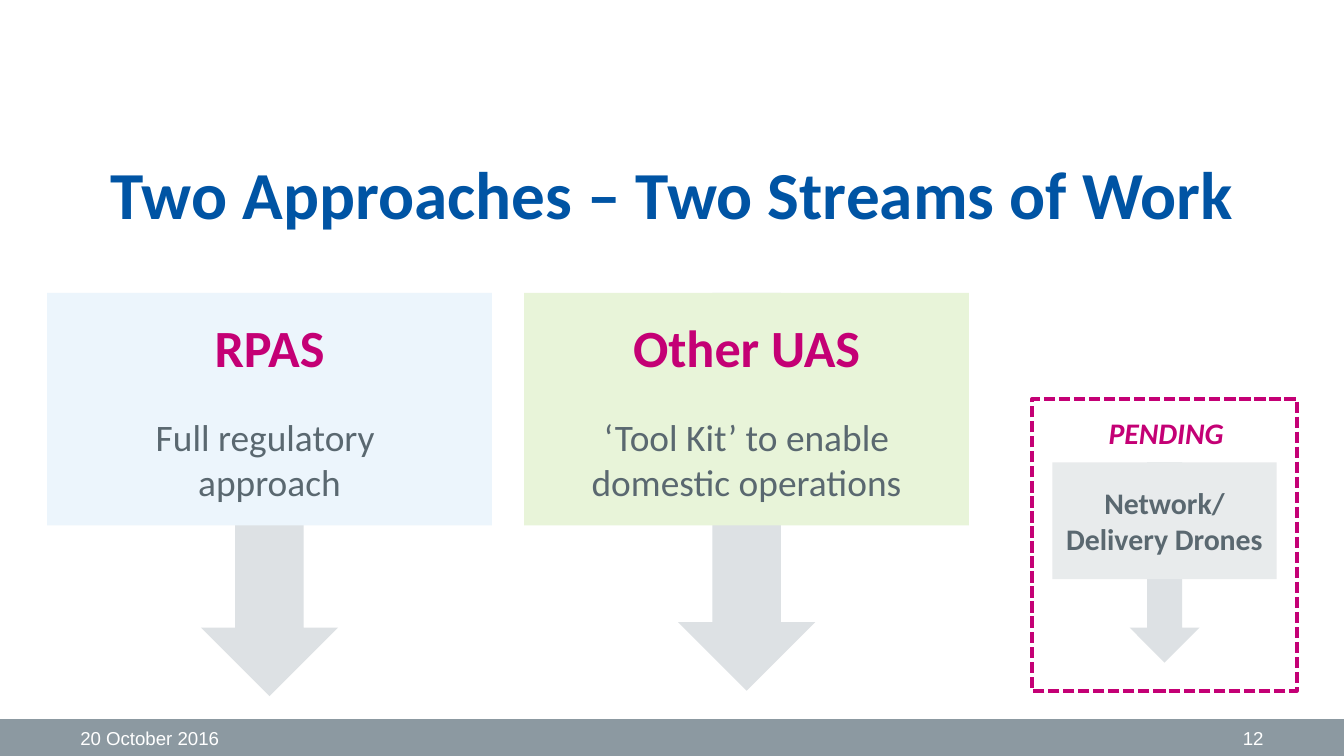
from pptx import Presentation
from pptx.dml.color import RGBColor
from pptx.enum.dml import MSO_LINE
from pptx.enum.shapes import MSO_SHAPE
from pptx.enum.text import MSO_ANCHOR, PP_ALIGN
from pptx.util import Inches, Pt

RECT, DOWN_ARROW = MSO_SHAPE.RECTANGLE, MSO_SHAPE.DOWN_ARROW
DASH = MSO_LINE.SQUARE_DOT
TOP, MIDDLE = MSO_ANCHOR.TOP, MSO_ANCHOR.MIDDLE
LEFT, CENTER, RIGHT = PP_ALIGN.LEFT, PP_ALIGN.CENTER, PP_ALIGN.RIGHT

WHITE = RGBColor(0xFF, 0xFF, 0xFF)
BLUE = RGBColor(0x00, 0x54, 0xA4)
MAGENTA = RGBColor(0xC4, 0x00, 0x75)
SLATE = RGBColor(0x5A, 0x68, 0x70)
FOOTER_GRAY = RGBColor(0x8C, 0x99, 0xA1)
ARROW_GRAY = RGBColor(0xDD, 0xE1, 0xE4)
PALE_BLUE = RGBColor(0xEC, 0xF5, 0xFC)
PALE_GREEN = RGBColor(0xE8, 0xF4, 0xD9)
PALE_GRAY = RGBColor(0xE8, 0xEB, 0xEC)

# Text formats
TITLE = {"name": "Calibri", "size": Pt(36), "bold": True, "color": BLUE}
HEADING = {"name": "Calibri", "size": Pt(28), "bold": True, "color": MAGENTA}
BODY = {"name": "Calibri", "size": Pt(20), "bold": False, "color": SLATE}
SMALL = {"name": "Calibri", "size": Pt(16), "bold": True, "color": SLATE}
STATUS = {"name": "Calibri", "size": Pt(16), "bold": True, "italic": True,
          "color": MAGENTA}
FOOTER = {"name": "Arial", "size": Pt(10), "color": WHITE}

# Content: \v is a line break inside a paragraph
TITLE_TEXT = "Two Approaches – Two Streams of Work"
PENDING_TEXT = "PENDING"
FOOTER_ITEMS = [("20 October 2016", 0.5, LEFT), ("12", 7.17, RIGHT)]
STREAMS = [
    {"box": (0.35, 2.18, 3.31, 1.73), "fill": PALE_BLUE,
     "arrow": (2.22, 1.02, 2.96),
     "lines": [("RPAS", HEADING), ("Full regulatory \vapproach", BODY)]},
    {"box": (3.9, 2.18, 3.31, 1.73), "fill": PALE_GREEN,
     "arrow": (2.18, 1.02, 2.96),
     "lines": [("Other UAS", HEADING),
               ("‘Tool Kit’ to enable domestic operations", BODY)]},
    {"box": (7.83, 3.44, 1.67, 0.87), "fill": PALE_GRAY,
     "arrow": (3.44, 0.52, 1.49),
     "lines": [("Network/\vDelivery Drones", SMALL)]},
]
PARAGRAPH_GAP = Pt(19.5)
FOOTER_TOP, FOOTER_HEIGHT = 5.35, 0.28

# Slide in 16:9
prs = Presentation()
prs.slide_width = Inches(10)
prs.slide_height = prs.slide_width * 9 // 16
slide = prs.slides.add_slide(prs.slide_layouts[5])


def add_block(kind, box, fill=None):
    block = slide.shapes.add_shape(kind, *map(Inches, box))
    block.shadow.inherit = False
    block.line.fill.background()
    if fill is None:
        block.fill.background()
    else:
        block.fill.solid()
        block.fill.fore_color.rgb = fill
    return block


def write(shape, lines, align=CENTER, anchor=MIDDLE, wrap=True):
    frame = shape.text_frame
    frame.word_wrap = wrap
    frame.vertical_anchor = anchor
    for i, (text, style) in enumerate(lines):
        paragraph = frame.add_paragraph() if i else frame.paragraphs[0]
        paragraph.text = text
        paragraph.alignment = align
        if i:
            paragraph.space_before = PARAGRAPH_GAP
        for run in paragraph.runs:
            for key, value in style.items():
                if key == "color":
                    run.font.color.rgb = value
                else:
                    setattr(run.font, key, value)


# Footer band
add_block(RECT, (0, FOOTER_TOP, 10, FOOTER_HEIGHT), FOOTER_GRAY)
for text, left, align in FOOTER_ITEMS:
    footer = slide.shapes.add_textbox(
        *map(Inches, (left, FOOTER_TOP, 2.33, FOOTER_HEIGHT)))
    write(footer, [(text, FOOTER)], align)

# Title
title = slide.shapes.title
title.left, title.top, title.width, title.height = map(Inches, (0.5, 1.08, 9, 0.79))
write(title, [(TITLE_TEXT, TITLE)], anchor=TOP)

# Streams: an arrow centred behind each card
for stream in STREAMS:
    left, top, width, height = stream["box"]
    arrow_top, arrow_width, arrow_height = stream["arrow"]
    arrow_left = left + (width - arrow_width) / 2
    add_block(DOWN_ARROW, (arrow_left, arrow_top, arrow_width, arrow_height),
              ARROW_GRAY)
    card = add_block(RECT, stream["box"], stream["fill"])
    card.text_frame.margin_left = card.text_frame.margin_right = Inches(0.05)
    write(card, stream["lines"])

# Pending frame
pending_frame = add_block(RECT, (7.68, 2.97, 1.97, 2.17))
pending_frame.line.color.rgb = MAGENTA
pending_frame.line.width = Pt(2)
pending_frame.line.dash_style = DASH
pending = slide.shapes.add_textbox(*map(Inches, (8.15, 3.04, 1.07, 0.37)))
write(pending, [(PENDING_TEXT, STATUS)], LEFT, TOP, wrap=False)

prs.save("out.pptx")
